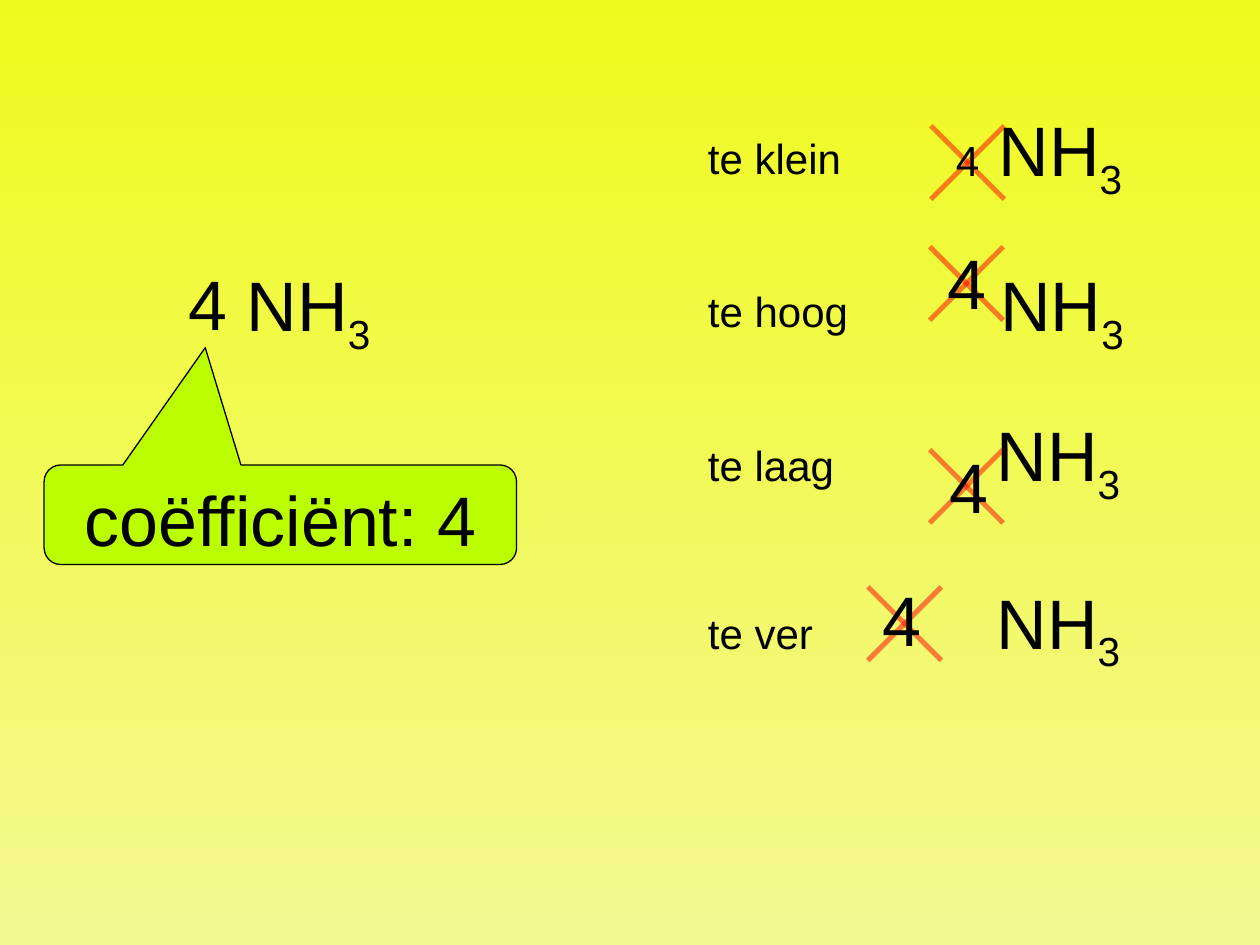
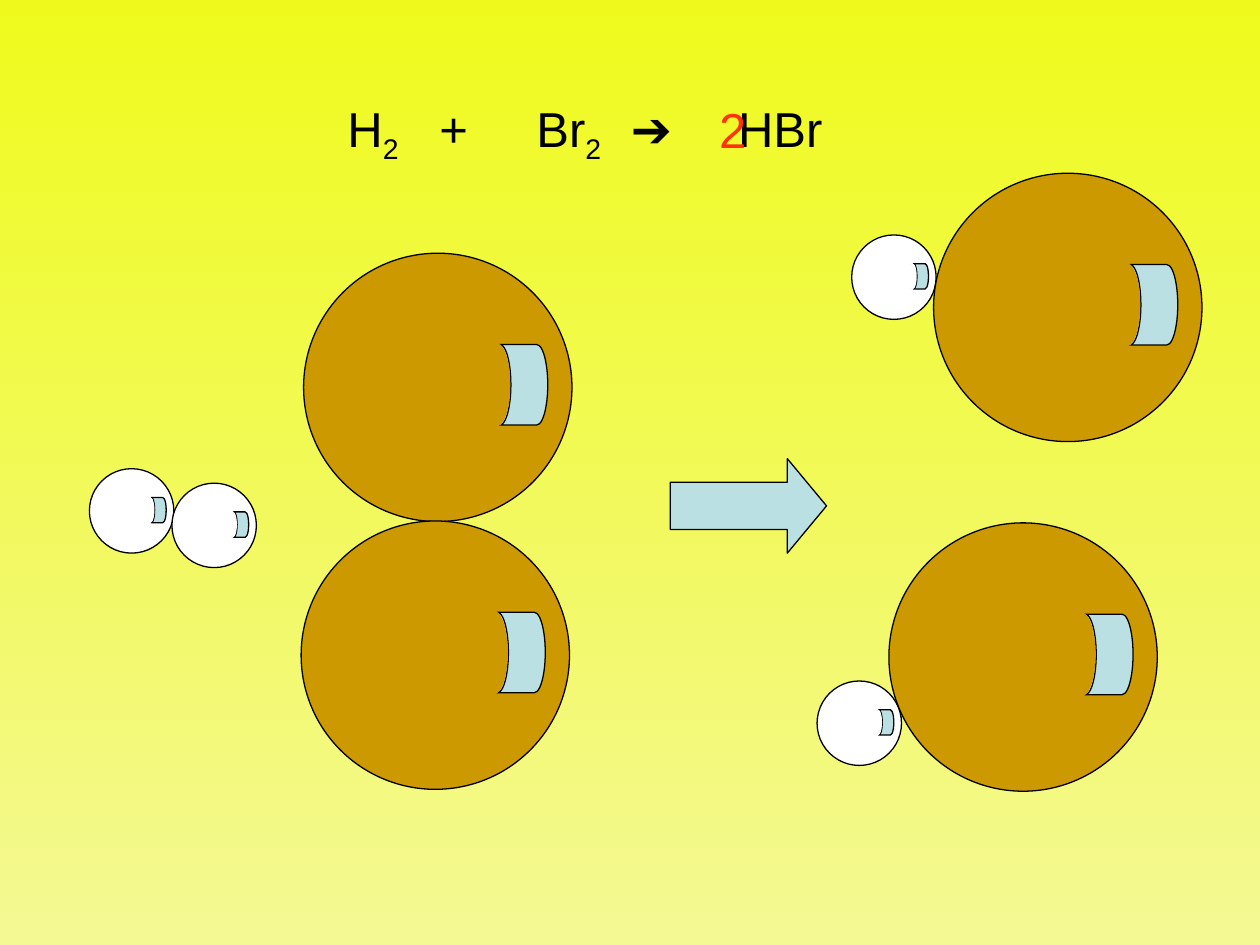
from typing import NamedTuple, Optional

import lxml.etree
import pptx
import pptx.dml.color
import pptx.enum.shapes
import pptx.enum.text
import pptx.oxml
import pptx.oxml.ns
import pptx.util

MSO = pptx.enum.shapes.MSO_SHAPE
ALIGN = pptx.enum.text.PP_ALIGN
ANCHOR = pptx.enum.text.MSO_ANCHOR
qn = pptx.oxml.ns.qn

COLUMNS, ROWS = 100, 75
CELL = pptx.util.Inches(0.1)
FONT = "Arial"
BLACK, WHITE, RED, ORANGE_RED = "000000", "FFFFFF", "FF0000", "FF3300"
YELLOW, PALE_YELLOW = "EFFA1C", "F4F993"
LIME, BROWN, PALE_BLUE = "BBFE00", "CC9900", "BBE0E3"


class Run(NamedTuple):
    text: str
    size: float = 40
    sub: bool = False


class Point(NamedTuple):
    x: float
    y: float


class Mistake(NamedTuple):
    label: str
    label_top: float
    cross: Point
    formula: Point
    digit: Optional[Point]


class Atom(NamedTuple):
    x: float
    y: float
    diameter: float
    color: str


NH3 = [Run("NH"), Run("3", sub=True)]
SMALL_4_NH3 = [Run("4", 24), Run(" NH"), Run("3", sub=True)]
SPACE = 1.54

MISTAKES = [
    Mistake("te klein", 10, Point(76.8, 12.9), Point(71.8, 8), None),
    Mistake("te hoog", 22.2, Point(76.7, 22.5), Point(73.8, 20.3), Point(74.2, 18.5)),
    Mistake("te laag", 34.4, Point(76.7, 38.6), Point(73.5, 32.2), Point(74.4, 34.7)),
    Mistake("te ver", 47.7, Point(71.8, 49.5), Point(73.5, 45.5), Point(69.1, 45.3)),
]


def hydrogen(x: float, y: float) -> Atom:
    return Atom(x, y, 6.7, WHITE)


def bromine(x: float, y: float) -> Atom:
    return Atom(x, y, 21.3, BROWN)


HYDROGEN_PAIR = [hydrogen(10.45, 40.55), hydrogen(17, 41.7)]
BROMINE_PAIR = [bromine(34.75, 30.75), bromine(34.55, 52)]
PRODUCTS = [
    hydrogen(70.95, 22), bromine(84.75, 24.4),
    hydrogen(68.2, 57.4), bromine(81.2, 52.15),
]


def grid(cells: float) -> int:
    return round(cells * CELL)


def rgb(color: str) -> pptx.dml.color.RGBColor:
    return pptx.dml.color.RGBColor.from_string(color)


def add_slide(prs):
    s = prs.slides.add_slide(prs.slide_layouts[6])
    fill = s.background.fill
    fill.gradient()
    fill.gradient_angle = 270
    for stop, color in zip(fill.gradient_stops, (YELLOW, PALE_YELLOW)):
        stop.color.rgb = rgb(color)
    return s


def add_runs(p, runs: list[Run], color: str = BLACK) -> None:
    for item in runs:
        r = p.add_run()
        r.text = item.text
        r.font.name = FONT
        r.font.size = pptx.util.Pt(item.size)
        r.font.color.rgb = rgb(color)
        if item.sub:
            r.font._element.set("baseline", "-25000")


def add_text(s, runs: list[Run], x: float, y: float, w: float, h: float, *,
             color: str = BLACK, indent: float = 0, tabs: tuple = ()) -> None:
    tf = s.shapes.add_textbox(*map(grid, (x, y, w, h))).text_frame
    tf.word_wrap = True
    tf.auto_size = pptx.enum.text.MSO_AUTO_SIZE.SHAPE_TO_FIT_TEXT
    p = tf.paragraphs[0]
    pPr = p._p.get_or_add_pPr()
    pPr.set("marL", str(grid(indent)))
    before = lxml.etree.SubElement(pPr, qn("a:spcBef"))
    lxml.etree.SubElement(before, qn("a:spcPct"), val="50000")
    if tabs:
        stops = lxml.etree.SubElement(pPr, qn("a:tabLst"))
        for tab in tabs:
            lxml.etree.SubElement(stops, qn("a:tab"), pos=str(grid(tab)), algn="l")
    add_runs(p, runs, color)


def add_centred(s, kind, x: float, y: float, w: float, h: float, color: str, *,
                line: bool = True, rotation: float = 0, alpha: int = 100,
                adjustments: tuple = ()):
    sp = s.shapes.add_shape(kind, *map(grid, (x - w / 2, y - h / 2, w, h)))
    sp.shadow.inherit = False
    sp.rotation = rotation
    sp.fill.solid()
    sp.fill.fore_color.rgb = rgb(color)
    if alpha < 100:
        solid = sp.fill._xPr.find(qn("a:solidFill"))
        lxml.etree.SubElement(solid[0], qn("a:alpha"), val=str(alpha * 1000))
    if line:
        sp.line.color.rgb = rgb(BLACK)
        sp.line.width = pptx.util.Pt(0.75)
    else:
        sp.line.fill.background()
    for i, value in enumerate(adjustments):
        sp.adjustments[i] = value
    return sp


def add_cross(s, centre: Point) -> None:
    for rotation in (45, 315):
        add_centred(s, MSO.RECTANGLE, *centre, 8.25, 0.4, RED,
                    line=False, rotation=rotation, alpha=50)


def add_atom(s, atom: Atom) -> None:
    x, y, d, color = atom
    glint_y = y - 0.01 * d
    add_centred(s, MSO.OVAL, x, y, d, d, color)
    add_centred(s, MSO.CAN, x + 0.3 * d, glint_y, 0.3 * d, 0.22 * d, PALE_BLUE,
                rotation=270, adjustments=(0.375,))
    add_centred(s, MSO.OVAL, x + 0.22 * d, glint_y, 0.1 * d, 0.31 * d, color, line=False)


def add_digit(s, x: float, y: float) -> None:
    add_text(s, [Run("4")], x, y, 5.6, 7.7)


def add_formula(s, x: float, y: float) -> None:
    add_text(s, NH3, x, y, 18.7, 7.7, indent=3 * SPACE)


def build_coefficient(prs) -> None:
    s = add_slide(prs)
    for m in MISTAKES:
        add_text(s, [Run(m.label, 24)], 55.2, m.label_top, 15.5, 5)
        add_cross(s, m.cross)

    add_formula(s, 14, 20.3)
    sp = add_centred(s, MSO.ROUNDED_RECTANGULAR_CALLOUT, 22.25, 40.85, 37.5, 7.9, LIME,
                     adjustments=(-0.159, -1.678, 0.167))
    tf = sp.text_frame
    tf.vertical_anchor = ANCHOR.TOP
    p = tf.paragraphs[0]
    p.alignment = ALIGN.CENTER
    add_runs(p, [Run("coëfficiënt: 4")])
    add_digit(s, 14, 20.2)

    for m in MISTAKES:
        if m.digit:
            add_formula(s, *m.formula)
            add_digit(s, *m.digit)
        else:
            add_text(s, SMALL_4_NH3, *m.formula, 21.4, 7.7, indent=2 * SPACE)


def build_reaction(prs) -> None:
    s = add_slide(prs)
    for atom in HYDROGEN_PAIR:
        add_atom(s, atom)
    add_centred(s, MSO.RIGHT_ARROW, 59.4, 40.15, 12.4, 7.5, PALE_BLUE,
                adjustments=(0.5, 0.415))
    equation = [Run("H", 28), Run("2", 28, True), Run("\t+\tBr", 28),
                Run("2", 28, True), Run("\t➔\tHBr", 28)]
    add_text(s, equation, 26.6, 7.3, 44.3, 5.7, tabs=(7.3, 15, 22.5, 31))
    add_text(s, [Run("2", 28)], 56.1, 7.4, 5.9, 5.7, color=ORANGE_RED)
    for atom in BROMINE_PAIR + PRODUCTS:
        add_atom(s, atom)


def main() -> None:
    prs = pptx.Presentation()
    prs.slide_width, prs.slide_height = grid(COLUMNS), grid(ROWS)
    build_coefficient(prs)
    build_reaction(prs)
    prs.save("out.pptx")


if __name__ == "__main__":
    main()
